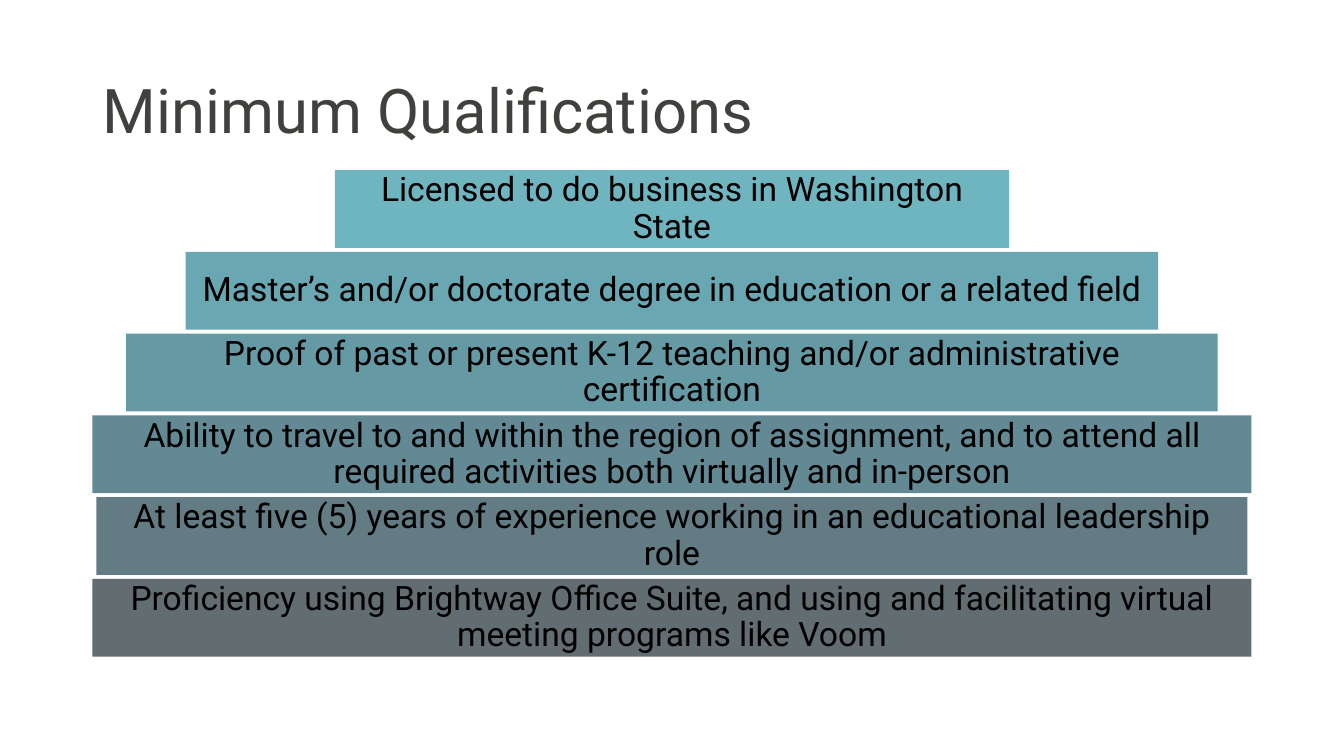
from pptx import Presentation
from pptx import util as u
from pptx.dml import color
from pptx.enum import shapes, text

FONT = "Roboto"
SLIDE_WIDTH = 33.87
BAR_TOP, BAR_HEIGHT, BAR_PITCH = 4.29, 1.96, 2.06
QUALIFICATIONS = [
    ("Licensed to do business in Washington State", 16.99, "6FB5BF"),
    ("Master’s and/or doctorate degree in education or a related field", 24.51, "69A7B2"),
    ("Proof of past or present K-12 teaching and/or administrative certification", 27.51, "6599A4"),
    ("Ability to travel to and within the region of assignment, and to attend all "
     "required activities both virtually and in-person", 29.21, "638A94"),
    ("At least five (5) years of experience working in an educational leadership role", 29.01, "637B82"),
    ("Proficiency using Brightway Office Suite, and using and facilitating virtual "
     "meeting programs like Voom", 29.21, "626D71"),
]


def rgb(value):
    return color.RGBColor.from_string(value)


def write_text(shape, wording, size, ink, align):
    frame = shape.text_frame
    frame.text = wording
    frame.word_wrap = True
    frame.auto_size = text.MSO_AUTO_SIZE.NONE
    frame.vertical_anchor = text.MSO_ANCHOR.MIDDLE
    para = frame.paragraphs[0]
    para.alignment = align
    para.line_spacing = 0.9
    para.font.name = FONT
    para.font.size = u.Pt(size)
    para.font.color.rgb = rgb(ink)


def add_title(page, wording):
    title = page.shapes.title
    title.left, title.top = u.Cm(2.33), u.Cm(1.02)
    title.width, title.height = u.Cm(29.21), u.Cm(3.68)
    write_text(title, wording, 44, "40403D", text.PP_ALIGN.LEFT)


def add_bar(page, top, width, wording, fill):
    bar = page.shapes.add_shape(
        shapes.MSO_SHAPE.RECTANGLE,
        u.Cm((SLIDE_WIDTH - width) / 2), u.Cm(top), u.Cm(width), u.Cm(BAR_HEIGHT))
    bar.shadow.inherit = False
    bar.fill.solid()
    bar.fill.fore_color.rgb = rgb(fill)
    bar.line.fill.background()
    write_text(bar, wording, 24, "000000", text.PP_ALIGN.CENTER)
    frame = bar.text_frame
    frame.margin_left = frame.margin_right = u.Cm(0.18)
    frame.margin_top = frame.margin_bottom = u.Cm(0.18)


def main():
    deck = Presentation()
    deck.slide_width, deck.slide_height = u.Cm(SLIDE_WIDTH), u.Cm(19.05)
    page = deck.slides.add_slide(deck.slide_layouts.get_by_name("Title Only"))
    add_title(page, "Minimum Qualifications")
    for row, (wording, width, fill) in enumerate(QUALIFICATIONS):
        add_bar(page, BAR_TOP + row * BAR_PITCH, width, wording, fill)
    deck.save("out.pptx")


if __name__ == "__main__":
    main()
